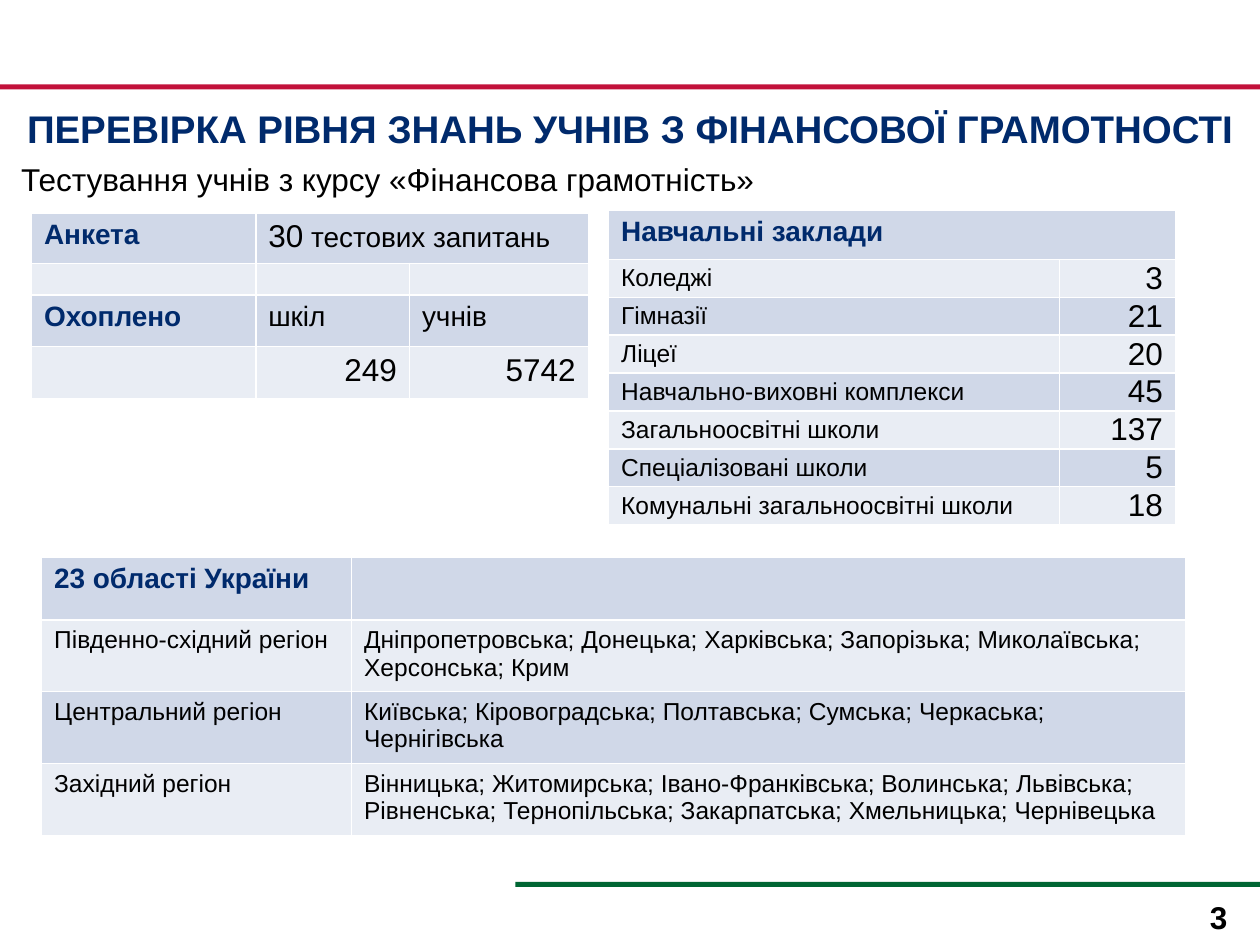
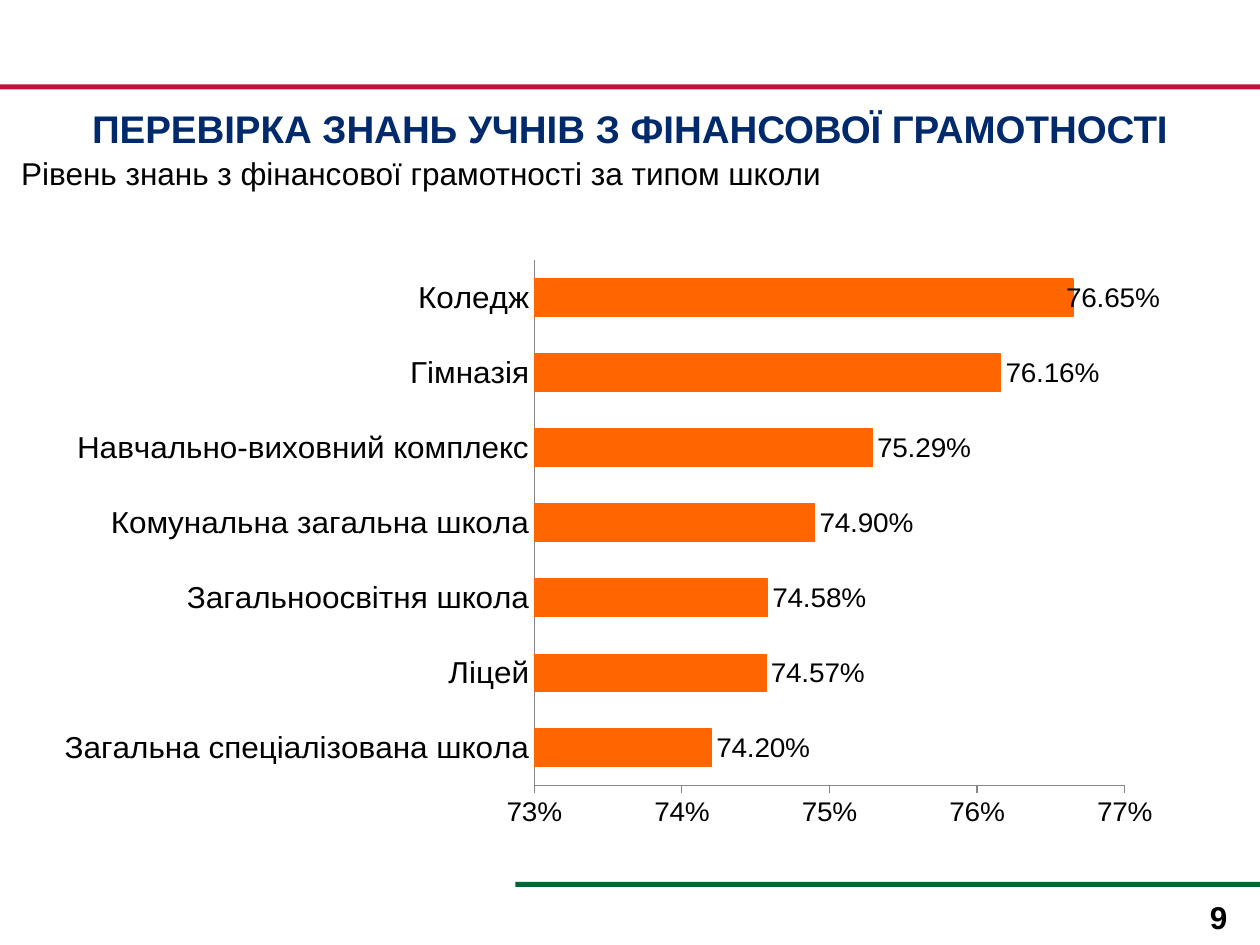
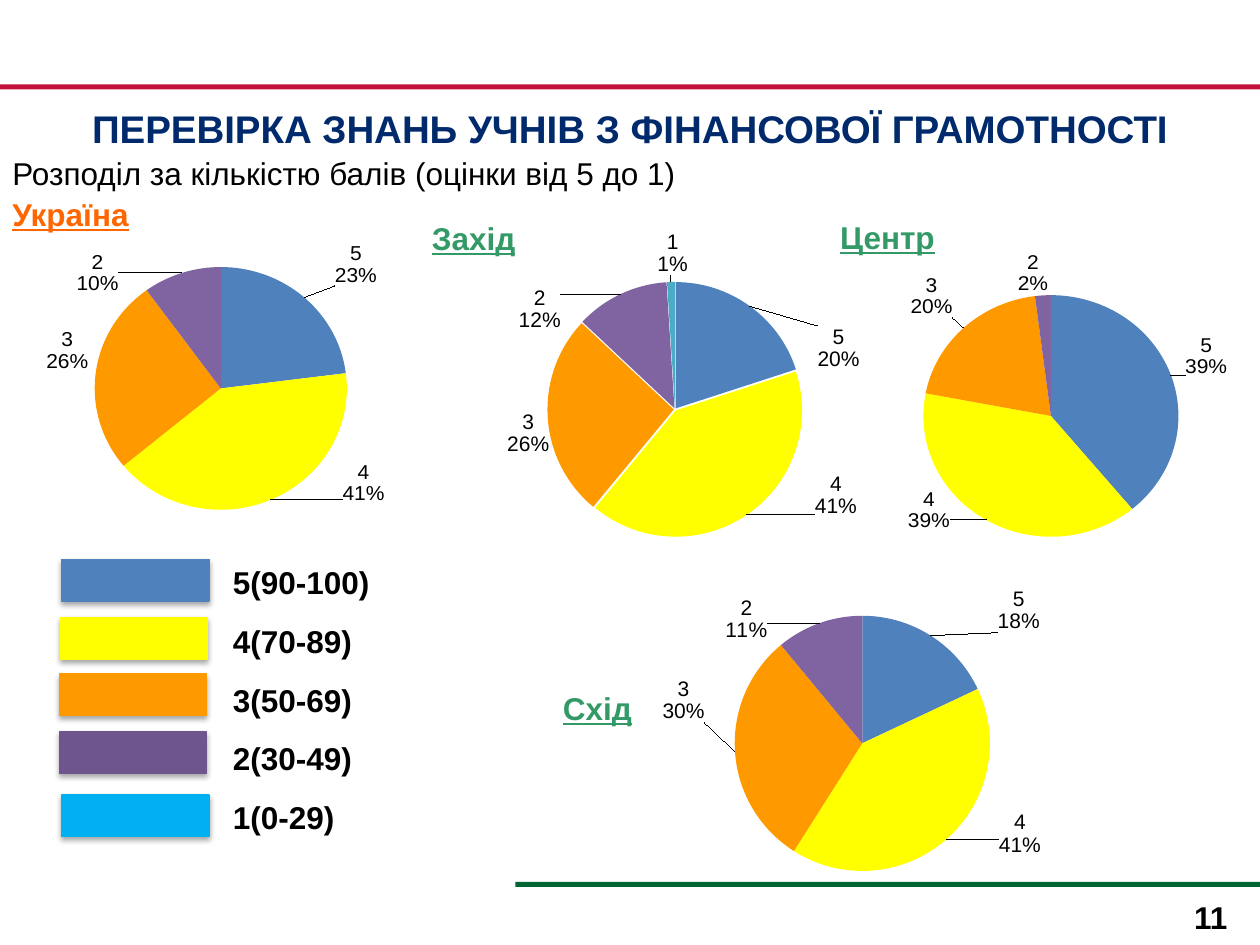
from copy import deepcopy
from math import copysign, cos, pi, sin

from lxml import etree
from pptx import Presentation
from pptx.chart.data import CategoryChartData
from pptx.dml.color import RGBColor
from pptx.enum.chart import XL_CHART_TYPE, XL_LABEL_POSITION, XL_TICK_MARK
from pptx.enum.shapes import MSO_SHAPE
from pptx.enum.text import MSO_ANCHOR, PP_ALIGN
from pptx.oxml import parse_xml
from pptx.oxml.ns import nsdecls, qn
from pptx.util import Inches, Pt

COLORS = {
    "red": "C2113A", "green": "006633", "navy": "002A6C", "black": "000000",
    "white": "FFFFFF", "orange": "FF6600", "mint": "339966", "axis": "868686",
    "row_dark": "D0D8E8", "row_light": "E9EDF4",
}
MARK_COLORS = ["4F81BD", "FFFF00", "FF9900", "8064A2", "4BACC6"]
STYLES = {
    "title": {"size": Pt(22), "bold": True, "color": "navy", "alignment": PP_ALIGN.CENTER},
    "subtitle": {"size": Pt(18)},
    "page number": {"size": Pt(18), "bold": True, "alignment": PP_ALIGN.RIGHT},
    "country": {"size": Pt(18), "bold": True, "underline": True, "color": "orange"},
    "region": {"size": Pt(18), "bold": True, "underline": True, "color": "mint"},
    "legend": {"size": Pt(18), "bold": True},
    "head": {"size": Pt(16), "bold": True, "color": "navy"},
    "text": {"size": Pt(16)},
    "small": {"size": Pt(14)},
    "large": {"size": Pt(18)},
    "amount": {"size": Pt(18), "alignment": PP_ALIGN.RIGHT},
}
TITLE = "ПЕРЕВІРКА ЗНАНЬ УЧНІВ З ФІНАНСОВОЇ ГРАМОТНОСТІ"


def rgb(name):
    return RGBColor.from_string(COLORS.get(name, name))


def inches(values):
    return [Inches(value) for value in values]


def write(para, style, text):
    span = para.add_run()
    span.text = text
    span.font.name = "Arial"
    for key, value in {"color": "black", "bold": False, **STYLES[style]}.items():
        if key == "color":
            span.font.color.rgb = rgb(value)
        else:
            setattr(para if key == "alignment" else span.font, key, value)


def add_child(parent, tag, **attributes):
    return etree.SubElement(parent, qn(tag), attributes)


def manual_layout(**values):
    layout = parse_xml(f"<c:layout {nsdecls('c')}><c:manualLayout/></c:layout>")
    for tag, value in values.items():
        add_child(layout[0], f"c:{tag}", val=str(value))
    return layout


def customise_label(labels, index, layout=None):
    """Give one point its own label place, or hide its label if there is no layout."""
    group = labels._element
    shared = [deepcopy(child) for child in group
              if child.tag not in (qn("c:dLbl"), qn("c:showLeaderLines"))]
    label = parse_xml(f'<c:dLbl {nsdecls("c")}><c:idx val="{index}"/></c:dLbl>')
    if layout is None:
        add_child(label, "c:delete", val="1")
    else:
        label.extend([layout, *shared])
    group.insert(len(group.findall(qn("c:dLbl"))), label)


class Deck:
    def __init__(self):
        self.deck = Presentation()
        self.deck.slide_width, self.deck.slide_height = inches((10, 7.5))
        self.page = None

    def new_page(self, number, title, subtitle, subtitle_at):
        self.page = self.deck.slides.add_slide(self.deck.slide_layouts[6])
        self.bar((0, 0.67, 10, 0.04), "red")
        self.bar((4.09, 7, 5.91, 0.04), "green")
        self.text((9.33, 7.08, 0.51, 0.33), "page number", number)
        self.text((0, 0.75, 10, 0.58), "title", title).margin_top = Inches(0.08)
        self.text(subtitle_at, "subtitle", subtitle)

    def bar(self, at, color):
        box = self.page.shapes.add_shape(MSO_SHAPE.RECTANGLE, *inches(at))
        box.shadow.inherit = False
        box.fill.solid()
        box.fill.fore_color.rgb = rgb(color)
        box.line.fill.background()
        return box

    def swatch(self, at, color):
        box = self.bar(at, color)
        box.line.color.rgb = rgb(color)
        box.line.width = Pt(0.75)
        effects = box._element.spPr.find(qn("a:effectLst"))
        shadow = add_child(effects, "a:outerShdw", blurRad="40000", dist="23000",
                           dir="5400000", rotWithShape="0")
        black = add_child(shadow, "a:srgbClr", val=COLORS["black"])
        add_child(black, "a:alpha", val="35000")

    def text(self, at, style, *lines, gap=0):
        frame = self.page.shapes.add_textbox(*inches(at)).text_frame
        frame.word_wrap = True
        for index, line in enumerate(lines):
            para = frame.add_paragraph() if index else frame.paragraphs[0]
            if index and gap:
                para.space_before = Pt(gap)
            write(para, style, line)
        return frame

    def table(self, corner, widths, heights, rows, merged_row=None, tight=False):
        """Each cell is a list of (style, text) spans; tight centres the body rows."""
        size = sum(widths), sum(heights)
        table = self.page.shapes.add_table(
            len(rows), len(widths), *inches((*corner, *size))).table
        table.first_row = False
        for column, width in zip(table.columns, inches(widths)):
            column.width = width
        for index, (row, height) in enumerate(zip(rows, inches(heights))):
            table.rows[index].height = height
            for column, spans in enumerate(row):
                self.cell(table.cell(index, column), spans,
                          "row_light" if index % 2 else "row_dark", tight and index > 0)
        if merged_row is not None:
            first, last = merged_row
            table.cell(0, first).merge(table.cell(0, last))

    def cell(self, cell, spans, color, tight):
        properties = cell._tc.get_or_add_tcPr()
        for side in "LRTB":
            line = add_child(properties, f"a:ln{side}", w=str(Pt(1)))
            add_child(add_child(line, "a:solidFill"), "a:srgbClr", val=COLORS["white"])
        cell.fill.solid()
        cell.fill.fore_color.rgb = rgb(color)
        if tight:
            cell.vertical_anchor = MSO_ANCHOR.MIDDLE
            cell.margin_top = cell.margin_bottom = 0
        para = cell.text_frame.paragraphs[0]
        for style, text in spans:
            write(para, style, text)
        if not spans:
            add_child(para._p, "a:endParaRPr", sz="900")

    def chart(self, kind, at, plot_at, categories, values, number_format, label_size):
        data = CategoryChartData(number_format=number_format)
        data.categories = categories
        data.add_series("Series 1", values)
        chart = self.page.shapes.add_chart(kind, *inches(at), data).chart
        chart.has_title = chart.has_legend = False
        chart.font.name, chart.font.size = "Arial", Pt(18)
        chart.font.color.rgb = rgb("black")
        area = chart._chartSpace.chart.plotArea
        for layout in area.findall(qn("c:layout")):
            area.remove(layout)
        area.insert(0, manual_layout(layoutTarget="inner", xMode="edge", yMode="edge",
                                     **dict(zip("xywh", plot_at))))
        series = chart.plots[0].series[0]
        labels = series.data_labels
        labels.show_value = True
        labels.number_format, labels.number_format_is_linked = number_format, False
        labels.position = XL_LABEL_POSITION.OUTSIDE_END
        labels.font.name, labels.font.size = "Arial", Pt(label_size)
        labels.font.color.rgb = rgb("black")
        return chart, series, labels

    def bar_chart(self, at, plot_at, categories, values):
        chart, series, labels = self.chart(
            XL_CHART_TYPE.BAR_CLUSTERED, at, plot_at, categories, values, "0.00%", 16)
        plot = chart.plots[0]
        plot.vary_by_categories = False
        plot.gap_width, plot.overlap = 99, -32
        series.format.fill.solid()
        series.format.fill.fore_color.rgb = rgb("orange")
        series.format.line.color.rgb = rgb("orange")
        series.format.line.width = Pt(0.75)
        customise_label(labels, len(values) - 1, manual_layout(x=-0.01, y=0))
        for axis in (chart.category_axis, chart.value_axis):
            axis.has_major_gridlines = False
            axis.major_tick_mark = axis.minor_tick_mark = XL_TICK_MARK.NONE
            axis.format.line.color.rgb = rgb("axis")
            axis.format.line.width = Pt(0.75)
        axis = chart.value_axis
        axis.major_tick_mark = XL_TICK_MARK.OUTSIDE
        axis.minimum_scale, axis.maximum_scale, axis.major_unit = 0.73, 0.77, 0.01
        axis.tick_labels.number_format = "0%"
        axis.tick_labels.number_format_is_linked = False
        axis.tick_labels.font.size = Pt(16)

    def pie(self, at, plot_at, values, label_centres, explosion=0):
        """Label centres are slide positions by point; other labels stay at the rim."""
        _, series, labels = self.chart(
            XL_CHART_TYPE.PIE, at, plot_at, ["5", "4", "3", "2", "1"], values, "0%", 12)
        if explosion:
            mark = parse_xml(f'<c:explosion {nsdecls("c")} val="{explosion}"/>')
            series._element.find(qn("c:tx")).addnext(mark)
        for index, color in enumerate(MARK_COLORS):
            fill = series.points[index].format.fill
            fill.solid()
            fill.fore_color.rgb = rgb(color)
        labels.show_category_name = True
        separator = parse_xml(f"<c:separator {nsdecls('c')}>\n</c:separator>")
        labels._element.find(qn("c:showBubbleSize")).addnext(separator)

        left, top, width, height = at
        x, y, w, h = plot_at
        centre_x, centre_y = left + (x + w / 2) * width, top + (y + h / 2) * height
        reach = min(w * width, h * height) / 2 + 0.06
        for index, value in enumerate(values):
            if not value:
                customise_label(labels, index)
            elif index in label_centres:
                angle = 2 * pi * (sum(values[:index]) + value / 2)
                across, down = sin(angle), -cos(angle)
                rim_x = centre_x + reach * across + copysign(0.17, across)
                rim_y = centre_y + reach * down + copysign(0.19, down)
                target_x, target_y = label_centres[index]
                customise_label(labels, index, manual_layout(
                    x=round((target_x - rim_x) / width, 3),
                    y=round((target_y - rim_y) / height, 3)))


def add_survey_page(deck):
    deck.new_page("3", "ПЕРЕВІРКА РІВНЯ ЗНАНЬ УЧНІВ З ФІНАНСОВОЇ ГРАМОТНОСТІ",
                  "Тестування учнів з курсу «Фінансова грамотність»", (0.07, 1.22, 8.13, 0.4))
    deck.table((0.25, 1.69), [1.78, 1.22, 1.42], [0.4, 0.25, 0.41, 0.41], [
        [[("head", "Анкета")], [("large", "30"), ("text", " тестових запитань")], []],
        [[], [], []],
        [[("head", "Охоплено")], [("text", "шкіл")], [("text", "учнів")]],
        [[], [("amount", "249")], [("amount", "5742")]],
    ], merged_row=(1, 2))

    regions = {
        "Південно-східний регіон": "Дніпропетровська; Донецька; Харківська; Запорізька; "
                                   "Миколаївська; Херсонська; Крим",
        "Центральний регіон": "Київська; Кіровоградська; Полтавська; Сумська; Черкаська; "
                              "Чернігівська",
        "Західний регіон": "Вінницька; Житомирська; Івано-Франківська; Волинська; Львівська; "
                           "Рівненська; Тернопільська; Закарпатська; Хмельницька; Чернівецька",
    }
    deck.table((0.33, 4.42), [2.46, 6.62], [0.5] + [0.57] * len(regions),
               [[[("head", "23 області України")], []]]
               + [[[("small", name)], [("small", areas)]] for name, areas in regions.items()])

    schools = {
        "Коледжі": "3", "Гімназії": "21", "Ліцеї": "20", "Навчально-виховні комплекси": "45",
        "Загальноосвітні школи": "137", "Спеціалізовані школи": "5",
        "Комунальні загальноосвітні школи": "18",
    }
    deck.table((4.83, 1.67), [3.58, 0.92], [0.39] + [0.3] * len(schools),
               [[[("head", "Навчальні заклади")], []]]
               + [[[("small", name)], [("amount", count)]] for name, count in schools.items()],
               merged_row=(0, 1), tight=True)


def add_school_type_page(deck):
    deck.new_page("9", TITLE, "Рівень знань з фінансової грамотності за типом школи",
                  (0.07, 1.17, 8.13, 0.4))
    results = {
        "Загальна спеціалізована школа": 0.742, "Ліцей": 0.7457,
        "Загальноосвітня школа": 0.7458, "Комунальна загальна школа": 0.749,
        "Навчально-виховний комплекс": 0.7529, "Гімназія": 0.7616, "Коледж": 0.7665,
    }
    deck.bar_chart((0.26, 1.92, 9.41, 4.64), (0.423, 0.033, 0.498, 0.934),
                   list(results), list(results.values()))


def add_marks_page(deck):
    deck.new_page("11", TITLE, "Розподіл за кількістю балів (оцінки від 5 до 1)",
                  (0, 1.17, 10, 0.42))
    deck.pie((0.17, 1.72, 3.25, 2.64), (0.179, 0.157, 0.616, 0.759),
             [0.23, 0.41, 0.26, 0.1, 0],
             {0: (2.83, 2.1), 1: (2.89, 3.93), 3: (0.77, 2.17)})
    deck.pie((3.5, 1.82, 3.58, 2.67), (0.236, 0.156, 0.566, 0.76),
             [0.2, 0.41, 0.26, 0.12, 0.01],
             {0: (6.66, 2.75), 1: (6.64, 3.95), 2: (4.19, 3.63), 3: (4.28, 2.44),
              4: (5.17, 2)}, explosion=1)
    deck.pie((6.58, 1.84, 3.42, 2.67), (0.219, 0.198, 0.592, 0.76),
             [0.39, 0.39, 0.2, 0.02, 0],
             {0: (9.58, 2.87), 1: (7.37, 4.19), 2: (7.39, 2.37), 3: (8.03, 2.17)})
    deck.pie((5.04, 4.44, 3.58, 2.67), (0.221, 0.167, 0.566, 0.76),
             [0.18, 0.41, 0.3, 0.11, 0],
             {0: (8.09, 4.83), 1: (8.1, 6.63), 2: (5.42, 5.75), 3: (5.92, 4.9)})

    deck.text((0, 1.5, 1.5, 0.4), "country", "Україна")
    for name, at in {"Захід": (3.33, 1.69, 1.08, 0.4), "Центр": (6.57, 1.68, 1, 0.4),
                     "Схід": (4.37, 5.42, 1.13, 0.4)}.items():
        deck.text(at, "region", name)

    swatches = [(0.49, 4.44, "4F81BD"), (0.48, 4.9, "FFFF00"), (0.47, 5.35, "FF9900"),
                (0.47, 5.81, "6E558D"), (0.49, 6.31, "00B0F0")]
    for left, top, color in swatches:
        deck.swatch((left, top, 1.17, 0.33), color)
    deck.text((1.75, 4.42, 1.58, 2.2), "legend", "5(90-100)", "4(70-89)", "3(50-69)",
              "2(30-49)", "1(0-29)", gap=12)


def main():
    deck = Deck()
    add_survey_page(deck)
    add_school_type_page(deck)
    add_marks_page(deck)
    deck.deck.save("out.pptx")


if __name__ == "__main__":
    main()
